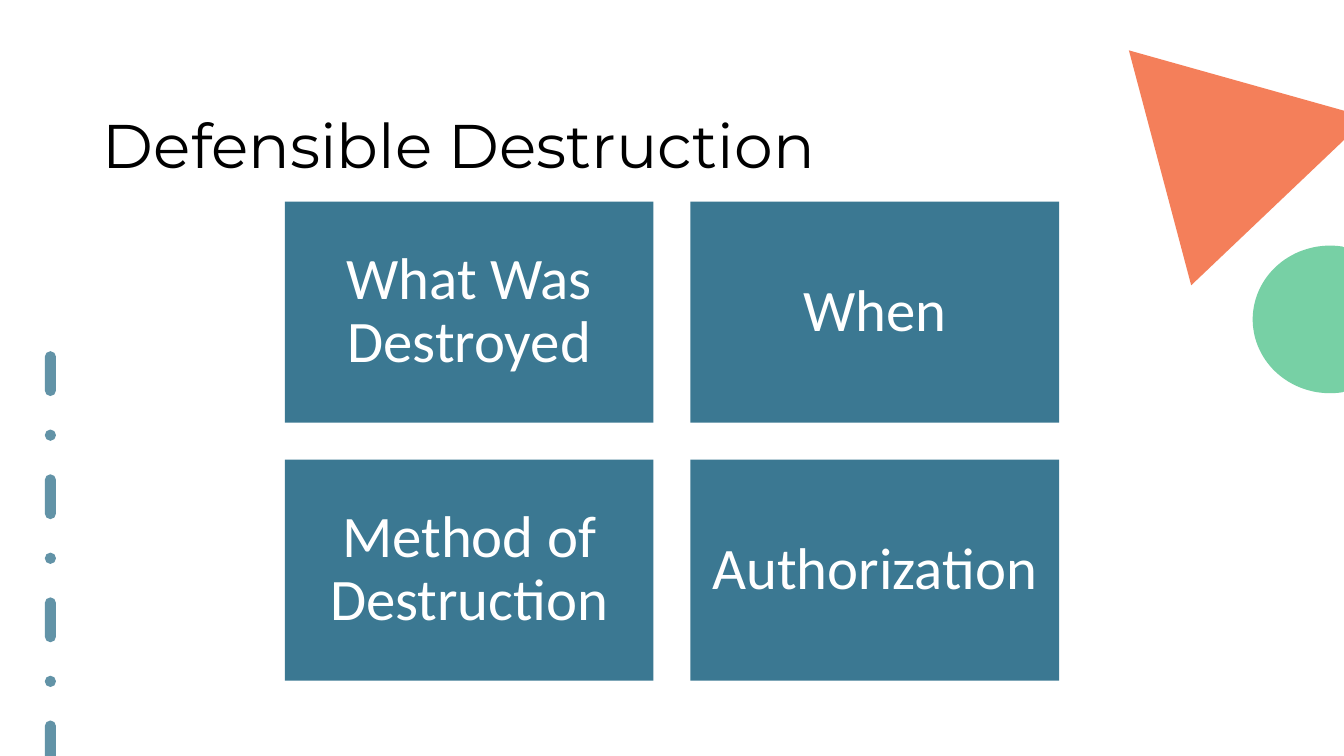
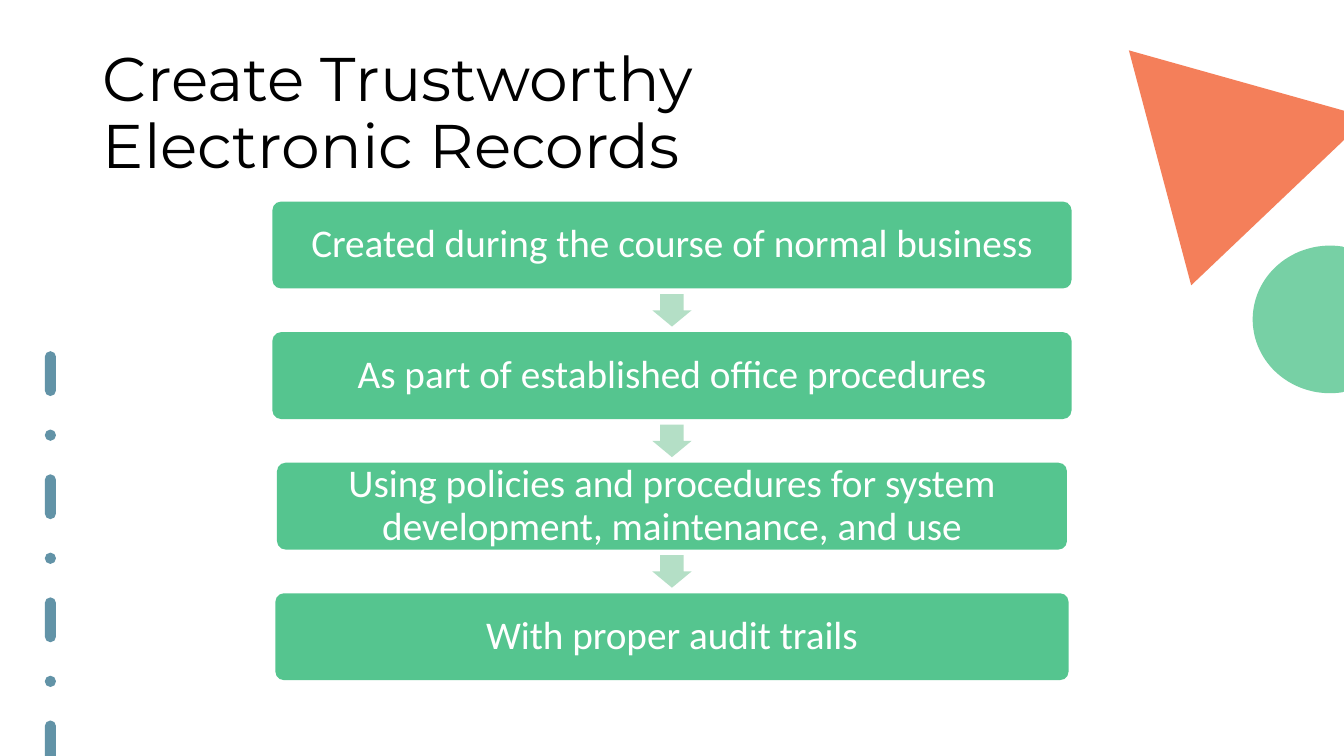
from math import cos, radians, sin

from lxml.etree import SubElement
from pptx import Presentation
from pptx.dml.color import RGBColor
from pptx.enum.dml import MSO_LINE
from pptx.enum.shapes import MSO_CONNECTOR, MSO_SHAPE
from pptx.enum.text import MSO_ANCHOR, MSO_AUTO_SIZE, PP_ALIGN
from pptx.oxml.ns import qn
from pptx.util import Cm, Pt

BLACK = RGBColor(0x00, 0x00, 0x00)
WHITE = RGBColor(0xFF, 0xFF, 0xFF)
TEAL = RGBColor(0x3B, 0x78, 0x92)
GREEN = RGBColor(0x55, 0xC5, 0x8F)
PALE_GREEN = RGBColor(0xB4, 0xDF, 0xC6)
ORANGE = RGBColor(0xF2, 0x60, 0x31)

TITLE_FONT = {"name": "Montserrat", "size": Pt(44)}
GRID_FONT = {"name": "Calibri", "size": Pt(42)}
STEP_FONT = {"name": "Calibri", "size": Pt(28)}
SLIDE_WIDTH = 33.87
SLIDE_HEIGHT = 19.05
CONTENT_TOP = 5.08


def write_text(frame, text, font, color, align, anchor):
    frame.text = text
    frame.word_wrap = True
    frame.auto_size = MSO_AUTO_SIZE.NONE
    frame.vertical_anchor = anchor
    para = frame.paragraphs[0]
    para.alignment = align
    para.line_spacing = 0.9
    for span in para.runs:
        for name, value in font.items():
            setattr(span.font, name, value)
        span.font.color.rgb = color


def add_block(page, kind, left, top, width, height, color, adjustments=()):
    """Add a flat, unoutlined preset shape, measured in centimetres."""
    block = page.shapes.add_shape(kind, Cm(left), Cm(top), Cm(width), Cm(height))
    block.shadow.inherit = False
    block.fill.solid()
    block.fill.fore_color.rgb = color
    block.line.fill.background()
    for index, value in enumerate(adjustments):
        block.adjustments[index] = value
    return block


deck = Presentation()
deck.slide_width = Cm(SLIDE_WIDTH)
deck.slide_height = Cm(SLIDE_HEIGHT)

# Shared layout: title place and decorations
layout = deck.slide_layouts.get_by_name("Title Only")
title_place = layout.placeholders[0]
title_place.left, title_place.top = Cm(2.34), Cm(1.02)
title_place.width, title_place.height = Cm(27.58), Cm(3.68)

titles = ["Defensible Destruction", "Create Trustworthy\vElectronic Records"]
pages = []
for title in titles:
    page = deck.slides.add_slide(layout)
    write_text(page.shapes.title.text_frame, title, TITLE_FONT, BLACK,
               PP_ALIGN.LEFT, MSO_ANCHOR.BOTTOM)
    pages.append(page)
grid_page, steps_page = pages

triangle_points = [(28.45, 1.27), (SLIDE_WIDTH, 2.79), (SLIDE_WIDTH, 3.53), (30.02, 7.19)]
circle_points = [
    (min(33.52 + 1.95 * cos(radians(angle)), SLIDE_WIDTH), 8.05 + 1.86 * sin(radians(angle)))
    for angle in range(0, 360, 3)
]
decorations = []
for points, color in [(triangle_points, ORANGE), (circle_points, GREEN)]:
    corners = [(Cm(x), Cm(y)) for x, y in points]
    builder = grid_page.shapes.build_freeform(*corners[0])
    builder.add_line_segments(corners[1:], close=True)
    outline = builder.convert_to_shape()
    outline.shadow.inherit = False
    outline.fill.solid()
    outline.fill.fore_color.rgb = color
    outline.line.fill.background()
    decorations.append(outline)

dashes = grid_page.shapes.add_connector(
    MSO_CONNECTOR.STRAIGHT, Cm(1.27), Cm(8.99), Cm(1.27), Cm(SLIDE_HEIGHT))
dashes.line.color.rgb = TEAL
dashes.line.width = Pt(8)
dashes.line.dash_style = MSO_LINE.DASH_DOT
dashes.element.spPr.find(qn("a:ln")).set("cap", "rnd")
SubElement(dashes.element.spPr, qn("a:effectLst"))
decorations.append(dashes)

for decoration in decorations:
    for color_node in decoration.element.xpath("./p:spPr//a:srgbClr"):
        SubElement(color_node, qn("a:alpha")).set("val", "80000")
    layout.shapes.element.append(decoration.element)

# Two by two grid
CELL_WIDTH, CELL_HEIGHT, CELL_GAP = 9.29, 5.57, 0.93
grid_left = (SLIDE_WIDTH - 2 * CELL_WIDTH - CELL_GAP) / 2
topics = ["What Was Destroyed", "When", "Method of Destruction", "Authorization"]
for index, topic in enumerate(topics):
    row, column = divmod(index, 2)
    cell = add_block(grid_page, MSO_SHAPE.RECTANGLE,
                     grid_left + column * (CELL_WIDTH + CELL_GAP),
                     CONTENT_TOP + row * (CELL_HEIGHT + CELL_GAP),
                     CELL_WIDTH, CELL_HEIGHT, TEAL)
    cell.text_frame.margin_left = cell.text_frame.margin_right = Cm(0.43)
    write_text(cell.text_frame, topic, GRID_FONT, WHITE, PP_ALIGN.CENTER, MSO_ANCHOR.MIDDLE)

# Steps joined by arrows
STEP_HEIGHT, STEP_GAP = 2.19, 1.1
ARROW_WIDTH, ARROW_HEIGHT = 0.99, 0.82
steps = [
    ("Created during the course of normal business", 20.14),
    ("As part of established office procedures", 20.14),
    ("Using policies and procedures for system development, maintenance, and use", 19.91),
    ("With proper audit trails", 19.99),
]
for index, (step, width) in enumerate(steps):
    top = CONTENT_TOP + index * (STEP_HEIGHT + STEP_GAP)
    if index:
        add_block(steps_page, MSO_SHAPE.DOWN_ARROW, (SLIDE_WIDTH - ARROW_WIDTH) / 2,
                  top - (STEP_GAP + ARROW_HEIGHT) / 2, ARROW_WIDTH, ARROW_HEIGHT,
                  PALE_GREEN, (0.6, 0.5))
    bar = add_block(steps_page, MSO_SHAPE.ROUNDED_RECTANGLE, (SLIDE_WIDTH - width) / 2,
                    top, width, STEP_HEIGHT, GREEN, (0.1,))
    bar.text_frame.margin_left = bar.text_frame.margin_right = Cm(0.3)
    bar.text_frame.margin_top = bar.text_frame.margin_bottom = 0
    write_text(bar.text_frame, step, STEP_FONT, WHITE, PP_ALIGN.CENTER, MSO_ANCHOR.MIDDLE)

deck.save("out.pptx")
